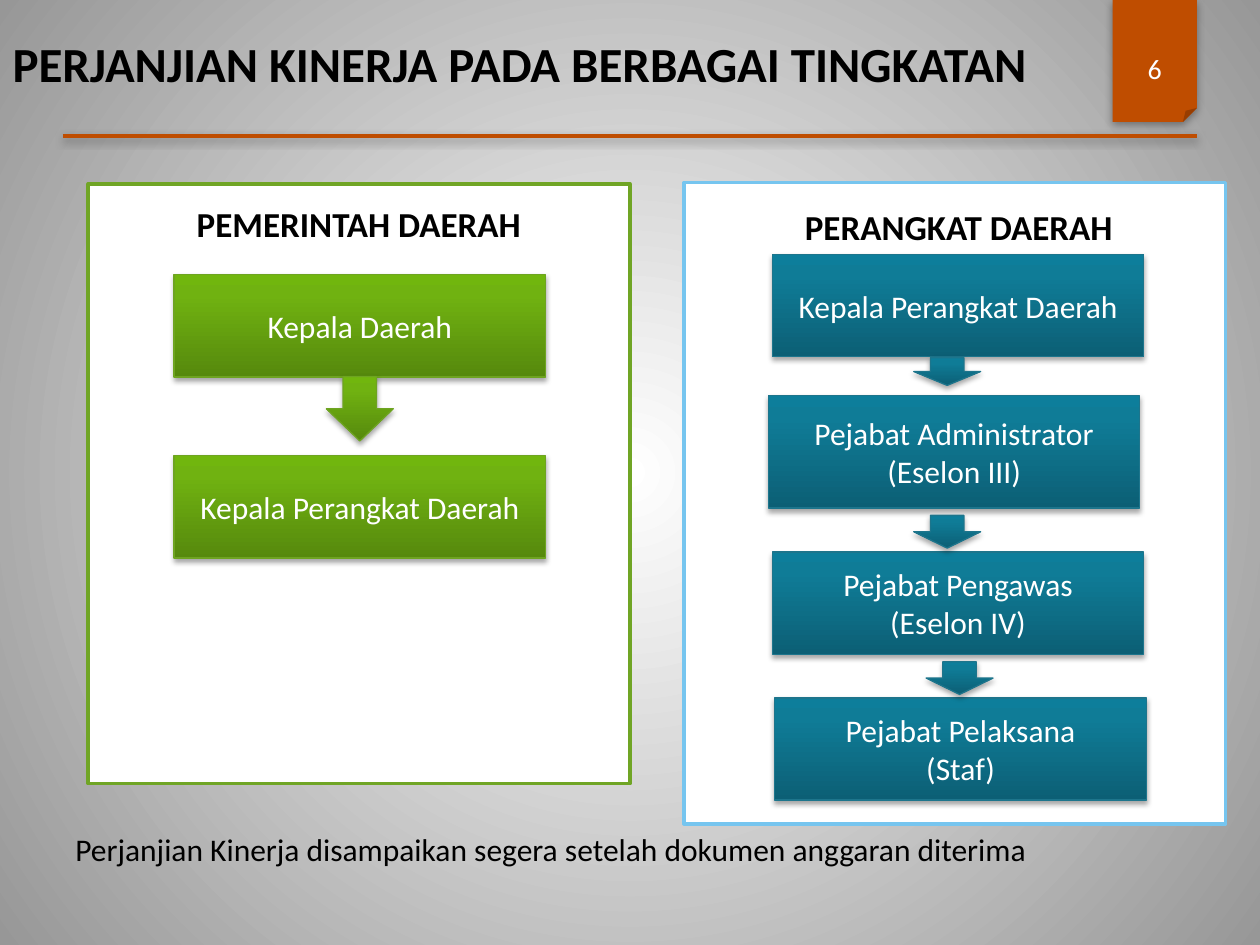
from dataclasses import dataclass

from lxml import etree
from pptx import Presentation
from pptx.dml.color import RGBColor
from pptx.enum.shapes import MSO_CONNECTOR, MSO_SHAPE
from pptx.enum.text import MSO_ANCHOR, MSO_AUTO_SIZE, PP_ALIGN
from pptx.oxml.ns import qn
from pptx.util import Cm, Pt

RECT, ARROW, FOLD = MSO_SHAPE.RECTANGLE, MSO_SHAPE.DOWN_ARROW, MSO_SHAPE.FOLDED_CORNER
LEFT, CENTER = PP_ALIGN.LEFT, PP_ALIGN.CENTER
TOP, MIDDLE = MSO_ANCHOR.TOP, MSO_ANCHOR.MIDDLE
FONT = "Calibri"
BLACK, WHITE, RUST = "000000", "FFFFFF", "BF4D00"


@dataclass
class Area:
    x: float
    y: float
    w: float
    h: float

    def size(self) -> tuple:
        return Cm(self.x), Cm(self.y), Cm(self.w), Cm(self.h)


@dataclass
class Step:
    text: str
    x: float
    y: float
    h: float = 2.06


@dataclass
class Drop:
    x: float
    y: float
    h: float


@dataclass
class Panel:
    area: Area
    edge: str
    head: str
    spot: Area
    stops: list
    line: str
    steps: list
    drops: list


PANELS = [
    Panel(Area(1.78, 3.71, 10.92, 12.09), "70A525",
          "PEMERINTAH DAERAH", Area(3.68, 3.96, 7.11, 1.12),
          [(0, "56890D"), (80, "70B211"), (100, "71B60E")], "6EA421",
          [Step("Kepala Daerah", 3.51, 5.54),
           Step("Kepala Perangkat Daerah", 3.51, 9.19)],
          [Drop(6.58, 7.59, 1.3)]),
    Panel(Area(13.79, 3.68, 10.92, 12.93), "76C5EF",
          "PERANGKAT DAERAH", Area(15.95, 4.01, 6.76, 1.12),
          [(0, "0C5F75"), (80, "0F7C97"), (100, "0D7E9B")], "1D758C",
          [Step("Kepala Perangkat Daerah", 15.57, 5.13),
           Step("Pejabat Administrator\n(Eselon III)", 15.49, 7.98, 2.26),
           Step("Pejabat Pengawas\n(Eselon IV)", 15.57, 11.13),
           Step("Pejabat Pelaksana\n(Staf)", 15.62, 14.07)],
          [Drop(18.42, 7.21, 0.56), Drop(18.42, 10.39, 0.66), Drop(18.67, 13.34, 0.66)]),
]


def rgb(code: str) -> RGBColor:
    return RGBColor.from_string(code)


def node(root, tag: str, **attrs):
    return etree.SubElement(root, qn(tag), {k: str(v) for k, v in attrs.items()})


def blend(fill, root, stops: list, radial: bool = False) -> None:
    """Give a fill its colour stops, upward or out from the centre."""
    fill.gradient()
    grad = root.find(".//" + qn("a:gradFill"))
    grad.clear()
    grad.set("rotWithShape", "1")
    row = node(grad, "a:gsLst")
    for pos, code in stops:
        node(node(row, "a:gs", pos=pos * 1000), "a:srgbClr", val=code)
    if radial:
        way = node(grad, "a:path", path="circle")
        node(way, "a:fillToRect", l=50000, t=50000, r=50000, b=50000)
    else:
        node(grad, "a:lin", ang=16200000, scaled=0)


def shade(item, blur: float, dist: float, alpha: int) -> None:
    """Add a downward shadow; call after fill and line are set."""
    root = node(item._element.spPr, "a:effectLst")
    cast = node(root, "a:outerShdw", blurRad=Pt(blur), dist=Pt(dist),
                dir=5400000, rotWithShape=0)
    node(node(cast, "a:srgbClr", val=BLACK), "a:alpha", val=alpha * 1000)


def write(item, text: str, size: int, color: str, align=LEFT,
          anchor=TOP, bold: bool = False, wrap: bool = True) -> None:
    frame = item.text_frame
    frame.text = text
    frame.word_wrap = wrap
    frame.auto_size = MSO_AUTO_SIZE.NONE
    frame.vertical_anchor = anchor
    for par in frame.paragraphs:
        par.alignment = align
        font = par.font
        font.name, font.size, font.bold = FONT, Pt(size), bold
        font.color.rgb = rgb(color)


def label(slide, area: Area, text: str, size: int, color: str, **style) -> None:
    write(slide.shapes.add_textbox(*area.size()), text, size, color, **style)


def block(slide, kind, area: Area, panel: Panel):
    """Draw a shaded box or arrow in the panel's colours."""
    item = slide.shapes.add_shape(kind, *area.size())
    blend(item.fill, item._element.spPr, panel.stops)
    item.line.color.rgb = rgb(panel.line)
    item.line.width = Pt(0.75)
    shade(item, 3.1, 1.8, 35)
    return item


def draw(slide, panel: Panel) -> None:
    back = slide.shapes.add_shape(RECT, *panel.area.size())
    back.shadow.inherit = False
    back.fill.solid()
    back.fill.fore_color.rgb = rgb(WHITE)
    back.line.color.rgb = rgb(panel.edge)
    back.line.width = Pt(2)
    label(slide, panel.spot, panel.head, 20, BLACK, align=CENTER, bold=True, wrap=False)
    for step in panel.steps:
        box = block(slide, RECT, Area(step.x, step.y, 7.49, step.h), panel)
        write(box, step.text, 18, WHITE, align=CENTER, anchor=MIDDLE)
    for drop in panel.drops:
        block(slide, ARROW, Area(drop.x, drop.y, 1.35, drop.h), panel)


def main() -> None:
    deck = Presentation()
    deck.slide_width, deck.slide_height = Cm(25.4), Cm(19.05)
    slide = deck.slides.add_slide(deck.slide_layouts[5])
    blend(slide.background.fill, slide.element, [(0, WHITE), (100, "979797")], radial=True)

    # Title
    title = slide.shapes.title
    title.left, title.top, title.width, title.height = Area(0, -0.33, 22.86, 3.18).size()
    write(title, "PERJANJIAN KINERJA PADA BERBAGAI TINGKATAN", 28, BLACK,
          anchor=MIDDLE, bold=True)

    # Page ribbon and rule
    tag = slide.shapes.add_shape(FOLD, *Area(22.43, 0, 1.7, 2.46).size())
    tag.fill.solid()
    tag.fill.fore_color.rgb = rgb(RUST)
    tag.line.fill.background()
    shade(tag, 5, 1.8, 35)
    label(slide, Area(22.43, 0.84, 1.7, 1.07), "6", 16, WHITE, align=CENTER, anchor=MIDDLE)
    rule = slide.shapes.add_connector(MSO_CONNECTOR.STRAIGHT,
                                      Cm(1.27), Cm(2.74), Cm(24.13), Cm(2.74))
    rule.line.color.rgb = rgb(RUST)
    rule.line.width = Pt(2)
    shade(rule, 5, 1.6, 38)

    # Panels and closing note
    for panel in PANELS:
        draw(slide, panel)
    label(slide, Area(1.27, 16.61, 22.86, 1.02),
          "Perjanjian Kinerja disampaikan segera setelah dokumen anggaran diterima", 18, BLACK)

    deck.save("out.pptx")


if __name__ == "__main__":
    main()
